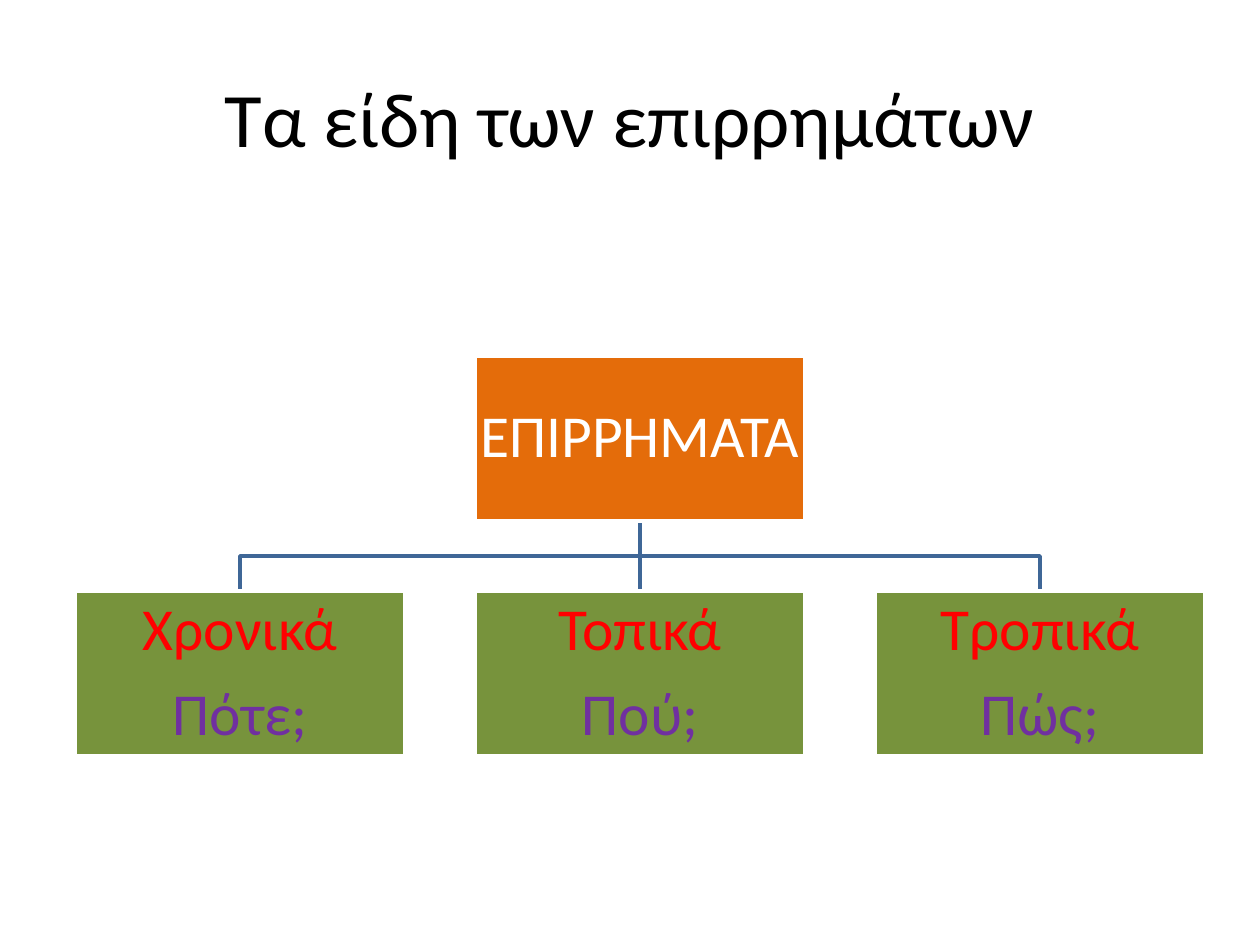
"""Build a slide with a tree of the kinds of Greek adverbs."""
import pptx
import pptx.util
import pptx.dml.color
import pptx.enum.shapes
import pptx.enum.text
import lxml.etree

PX = 914400 / 126
BOX_W, BOX_H = 330, 165
LEFT, STEP = 75, 400
ROOT_Y, KIND_Y = 356, 591
MID_X = LEFT + STEP + BOX_W // 2
ROOT_BOTTOM = ROOT_Y + BOX_H
BEND_Y = (ROOT_BOTTOM + KIND_Y) // 2
KINDS = [("Χρονικά", "Πότε;"), ("Τοπικά", "Πού;"), ("Τροπικά", "Πώς;")]


def rgb(color):
    return pptx.dml.color.RGBColor.from_string(color)


def add_box(s, x, y, fill, lines):
    sp = s.shapes.add_shape(pptx.enum.shapes.MSO_SHAPE.RECTANGLE,
                            *[round(v * PX) for v in (x, y, BOX_W, BOX_H)])
    sp.shadow.inherit = False
    sp.fill.solid()
    sp.fill.fore_color.rgb = rgb(fill)
    sp.line.color.rgb = rgb("FFFFFF")
    sp.line.width = pptx.util.Pt(2)
    tf = sp.text_frame
    tf.word_wrap = True
    tf.vertical_anchor = pptx.enum.text.MSO_ANCHOR.MIDDLE
    tf.margin_left = tf.margin_right = tf.margin_top = tf.margin_bottom = round(3 * PX)
    for i, (text, color) in enumerate(lines):
        p = tf.add_paragraph() if i else tf.paragraphs[0]
        p.alignment = pptx.enum.text.PP_ALIGN.CENTER
        p.line_spacing = 0.9
        p.space_after = pptx.util.Pt(12)
        r = p.add_run()
        r.text = text
        r.font.size = pptx.util.Pt(34)
        r.font.name = "Calibri"
        r.font.color.rgb = rgb(color)
    return sp


prs = pptx.Presentation()
prs.slide_width = round(1260 * PX)
prs.slide_height = round(945 * PX)
s = prs.slides.add_slide(prs.slide_layouts[5])

title = s.shapes.title
title.left, title.top, title.width, title.height = [round(v * PX) for v in (63, 38, 1134, 157)]
tf = title.text_frame
tf.vertical_anchor = pptx.enum.text.MSO_ANCHOR.MIDDLE
p = tf.paragraphs[0]
p.alignment = pptx.enum.text.PP_ALIGN.CENTER
r = p.add_run()
r.text = "Τα είδη των επιρρημάτων"
r.font.size = pptx.util.Pt(44)
r.font.name = "Calibri"
r.font.color.rgb = rgb("000000")

branches = []
for end_x in (MID_X + STEP, MID_X - STEP):
    fb = s.shapes.build_freeform(MID_X, ROOT_BOTTOM, scale=PX)
    fb.add_line_segments([(MID_X, BEND_Y), (end_x, BEND_Y), (end_x, KIND_Y)], close=False)
    branch = fb.convert_to_shape()
    branch.shadow.inherit = False
    branch.fill.background()
    branches.append(branch)

trunk = s.shapes.add_connector(pptx.enum.shapes.MSO_CONNECTOR.STRAIGHT,
                               *[round(v * PX) for v in (MID_X, ROOT_BOTTOM, MID_X, KIND_Y)])
lxml.etree.SubElement(trunk._element.spPr, pptx.oxml.ns.qn("a:effectLst"))
for line in [trunk.line] + [branch.line for branch in branches]:
    line.color.rgb = rgb("3F6797")
    line.width = pptx.util.Pt(2)

root = add_box(s, LEFT + STEP, ROOT_Y, "E46C0A", [("ΕΠΙΡΡΗΜΑΤΑ", "FFFFFF")])
kinds = [add_box(s, LEFT + i * STEP, KIND_Y, "77933C", [(kind, "FF0000"), (question, "7030A0")])
         for i, (kind, question) in enumerate(KINDS)]
trunk.begin_connect(root, 2)
trunk.end_connect(kinds[1], 0)

prs.save("out.pptx")
